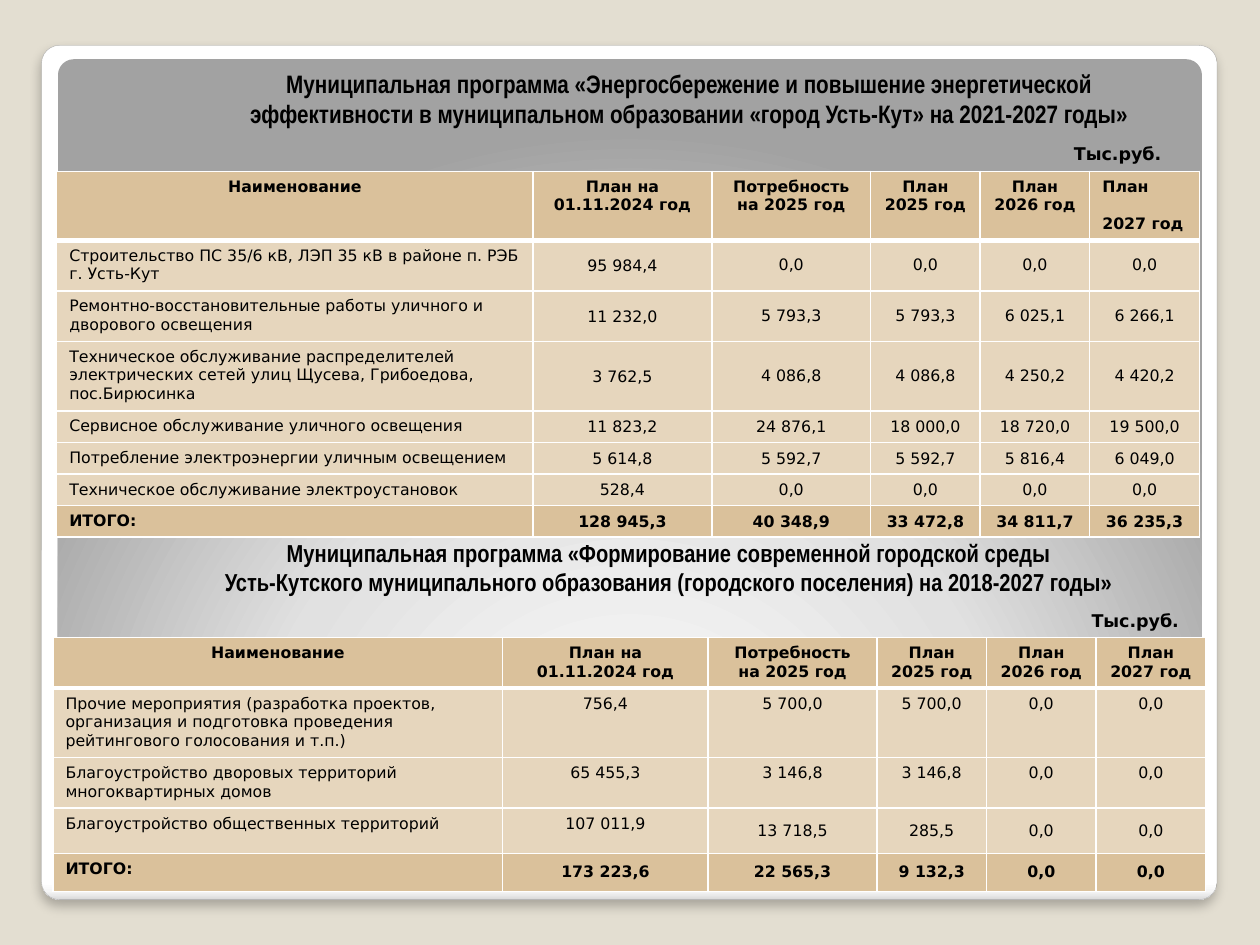
"""Build a slide with the financing tables of two municipal programmes."""
from lxml import etree
from pptx import Presentation
from pptx.dml.color import RGBColor
from pptx.enum.shapes import MSO_SHAPE
from pptx.enum.text import MSO_ANCHOR, MSO_AUTO_SIZE, PP_ALIGN
from pptx.oxml import parse_xml
from pptx.oxml.ns import nsdecls
from pptx.util import Inches, Pt

ROUNDED = MSO_SHAPE.ROUNDED_RECTANGLE
TOP, MIDDLE, BOTTOM = MSO_ANCHOR.TOP, MSO_ANCHOR.MIDDLE, MSO_ANCHOR.BOTTOM
LEFT, CENTER = PP_ALIGN.LEFT, PP_ALIGN.CENTER
FIXED = MSO_AUTO_SIZE.NONE

COLORS = {"background": "E3DED1", "outline": "A4A4A4", "text": "000000",
          "strong": "DAC19B", "plain": "E6D6BD", "border": "FFFFFF"}
HEADING = {"name": "Arial Narrow", "size": Pt(14), "bold": True}
TITLE = {**HEADING, "size": Pt(14.4)}
UNIT = {"name": "DejaVu Sans", "size": Pt(10), "bold": True}
STRONG = {**UNIT, "size": Pt(9)}
PLAIN = {**STRONG, "bold": False}
TIGHT = {"margin_left": Inches(0.01), "margin_right": Inches(0.01),
         "margin_top": Inches(0.01), "margin_bottom": 0}


def write(frame, text, font_format, alignment=CENTER):
    frame.word_wrap = True
    for index, line in enumerate(text.split("\n")):
        paragraph = frame.add_paragraph() if index else frame.paragraphs[0]
        paragraph.alignment = alignment
        run = paragraph.add_run()
        run.text = line
        run.font.color.rgb = RGBColor.from_string(COLORS["text"])
        for key, value in font_format.items():
            setattr(run.font, key, value)


def add_borders(cell, widths):
    for side, width in widths.items():
        cell._tc.get_or_add_tcPr().append(parse_xml(
            f'<a:ln{side} {nsdecls("a")} w="{Pt(width)}"><a:solidFill>'
            f'<a:srgbClr val="{COLORS["border"]}"/></a:solidFill></a:ln{side}>'))


prs = Presentation()
prs.slide_width, prs.slide_height = Inches(10), Inches(7.5)
slide = prs.slides.add_slide(prs.slide_layouts[5])
slide.background.fill.solid()
slide.background.fill.fore_color.rgb = RGBColor.from_string(COLORS["background"])

panels = [
    ((0.33, 0.36, 9.33, 6.78),
     [(0, "FFFFFF"), (98, "FFFFFF"), (99, "F7F7F7"), (100, "DADADA")],
     '<a:lin ang="5400000" scaled="0"/>'),
    ((0.46, 0.47, 9.08, 6),
     [(0, "FFFFFF"), (55, "E1E1E1"), (100, "A2A2A2")],
     '<a:path path="circle"><a:fillToRect l="50000" t="175000" r="50000" b="-75000"/></a:path>'),
]
backdrop = []
for box, stops, direction in panels:
    panel = slide.shapes.add_shape(ROUNDED, *map(Inches, box))
    panel.adjustments[0] = 0.021
    panel.shadow.inherit = False
    panel.line.fill.background()
    stop_xml = "".join(f'<a:gs pos="{position * 1000}"><a:srgbClr val="{color}"/></a:gs>'
                       for position, color in stops)
    panel._element.spPr.find("{*}prstGeom").addnext(parse_xml(
        f'<a:gradFill {nsdecls("a")} rotWithShape="1"><a:gsLst>{stop_xml}</a:gsLst>'
        f'{direction}</a:gradFill>'))
    backdrop.append(panel)

card = backdrop[0]
card.line.color.rgb = RGBColor.from_string(COLORS["outline"])
card.line.width = Pt(0.16)
card._element.spPr.find("{*}effectLst").append(etree.fromstring(
    f'<a:outerShdw {nsdecls("a")} blurRad="{Pt(6)}" dist="{Pt(4)}" dir="5400000" '
    'algn="tl" rotWithShape="0"><a:srgbClr val="000000"><a:alpha val="25000"/>'
    '</a:srgbClr></a:outerShdw>'))

title = slide.shapes.title
slide.shapes._spTree.append(title._element)
title_place = {"left": Inches(1.85), "top": Inches(0.52),
               "width": Inches(7.24), "height": Inches(0.55)}
for key, value in title_place.items():
    setattr(title, key, value)
title.text_frame.auto_size = FIXED
title.text_frame.vertical_anchor = BOTTOM
write(title.text_frame, "Муниципальная программа «Энергосбережение и повышение энергетической "
      "эффективности в муниципальном образовании «город Усть-Кут» на 2021-2027 годы»", TITLE)

labels = [
    ((8.37, 1.09, 1, 0.25), "Тыс.руб.", UNIT, MIDDLE),
    ((1.61, 4.22, 7.4, 0.57),
     "Муниципальная программа «Формирование современной городской среды\n"
     "Усть-Кутского муниципального образования (городского поселения) на 2018-2027 годы»",
     HEADING, TOP),
    ((8.56, 4.79, 0.9, 0.27), "Тыс.руб.", UNIT, TOP),
]
for box, text, font_format, anchor in labels:
    label = slide.shapes.add_textbox(*map(Inches, box))
    label.text_frame.vertical_anchor = anchor
    write(label.text_frame, text, font_format)

header = ["Наименование", "План на\n01.11.2024 год", "Потребность\nна 2025 год",
          "План\n2025 год", "План\n2026 год", "План\n2027 год"]
energy_rows = [
    header,
    ["Строительство ПС 35/6 кВ, ЛЭП 35 кВ в районе п. РЭБ г. Усть-Кут",
     "95 984,4", "0,0", "0,0", "0,0", "0,0"],
    ["Ремонтно-восстановительные работы уличного и дворового освещения",
     "11 232,0", "5 793,3", "5 793,3", "6 025,1", "6 266,1"],
    ["Техническое обслуживание распределителей электрических сетей улиц Щусева, "
     "Грибоедова, пос.Бирюсинка", "3 762,5", "4 086,8", "4 086,8", "4 250,2", "4 420,2"],
    ["Сервисное обслуживание уличного освещения",
     "11 823,2", "24 876,1", "18 000,0", "18 720,0", "19 500,0"],
    ["Потребление электроэнергии уличным освещением",
     "5 614,8", "5 592,7", "5 592,7", "5 816,4", "6 049,0"],
    ["Техническое обслуживание электроустановок", "528,4", "0,0", "0,0", "0,0", "0,0"],
    ["ИТОГО:", "128 945,3", "40 348,9", "33 472,8", "34 811,7", "36 235,3"],
]
city_rows = [
    header,
    ["Прочие мероприятия (разработка проектов, организация и подготовка проведения "
     "рейтингового голосования и т.п.)", "756,4", "5 700,0", "5 700,0", "0,0", "0,0"],
    ["Благоустройство дворовых территорий многоквартирных домов",
     "65 455,3", "3 146,8", "3 146,8", "0,0", "0,0"],
    ["Благоустройство общественных территорий",
     "107 011,9", "13 718,5", "285,5", "0,0", "0,0"],
    ["ИТОГО:", "173 223,6", "22 565,3", "9 132,3", "0,0", "0,0"],
]
programmes = [
    (0.45, 1.36, [3.78, 1.42, 1.26] + [0.87] * 3,
     [0.54, 0.4, 0.39, 0.54] + [0.25] * 4, energy_rows,
     lambda row, column: True,
     lambda row, column: column == 1 or row >= 5 or (row == 4 and column >= 4)),
    (0.42, 5.06, [3.57, 1.63, 1.34] + [0.87] * 3,
     [0.4, 0.55, 0.4, 0.36, 0.3], city_rows,
     lambda row, column: row == 4 or (row == 3 and column >= 2),
     lambda row, column: row == 3 and column >= 2),
]
for left, top, widths, heights, rows, is_middle, is_tight in programmes:
    budget = slide.shapes.add_table(len(rows), len(widths), Inches(left), Inches(top),
                                    Inches(sum(widths)), Inches(sum(heights))).table
    budget.horz_banding = False
    for column, width in zip(budget.columns, widths):
        column.width = Inches(width)
    for row_index, (height, values) in enumerate(zip(heights, rows)):
        budget.rows[row_index].height = Inches(height)
        is_strong = row_index in (0, len(rows) - 1)
        for column_index, value in enumerate(values):
            cell = budget.cell(row_index, column_index)
            is_figure = row_index > 0 and column_index > 0
            add_borders(cell, {"L": 1, "R": 1, "T": 3 if row_index == 1 else 1,
                               "B": 3 if row_index == 0 else 1})
            cell.fill.solid()
            cell.fill.fore_color.rgb = RGBColor.from_string(
                COLORS["strong" if is_strong else "plain"])
            cell.vertical_anchor = (
                MIDDLE if is_figure and is_middle(row_index, column_index) else TOP)
            if is_figure and is_tight(row_index, column_index):
                for key, margin in TIGHT.items():
                    setattr(cell, key, margin)
            write(cell.text_frame, value, STRONG if is_strong else PLAIN,
                  LEFT if row_index and not column_index else CENTER)
    if rows is energy_rows:
        last_year = budget.cell(0, len(widths) - 1).text_frame.paragraphs
        for paragraph in last_year:
            paragraph.alignment = LEFT
        last_year[1].space_before = Pt(10.5)

prs.save("out.pptx")
